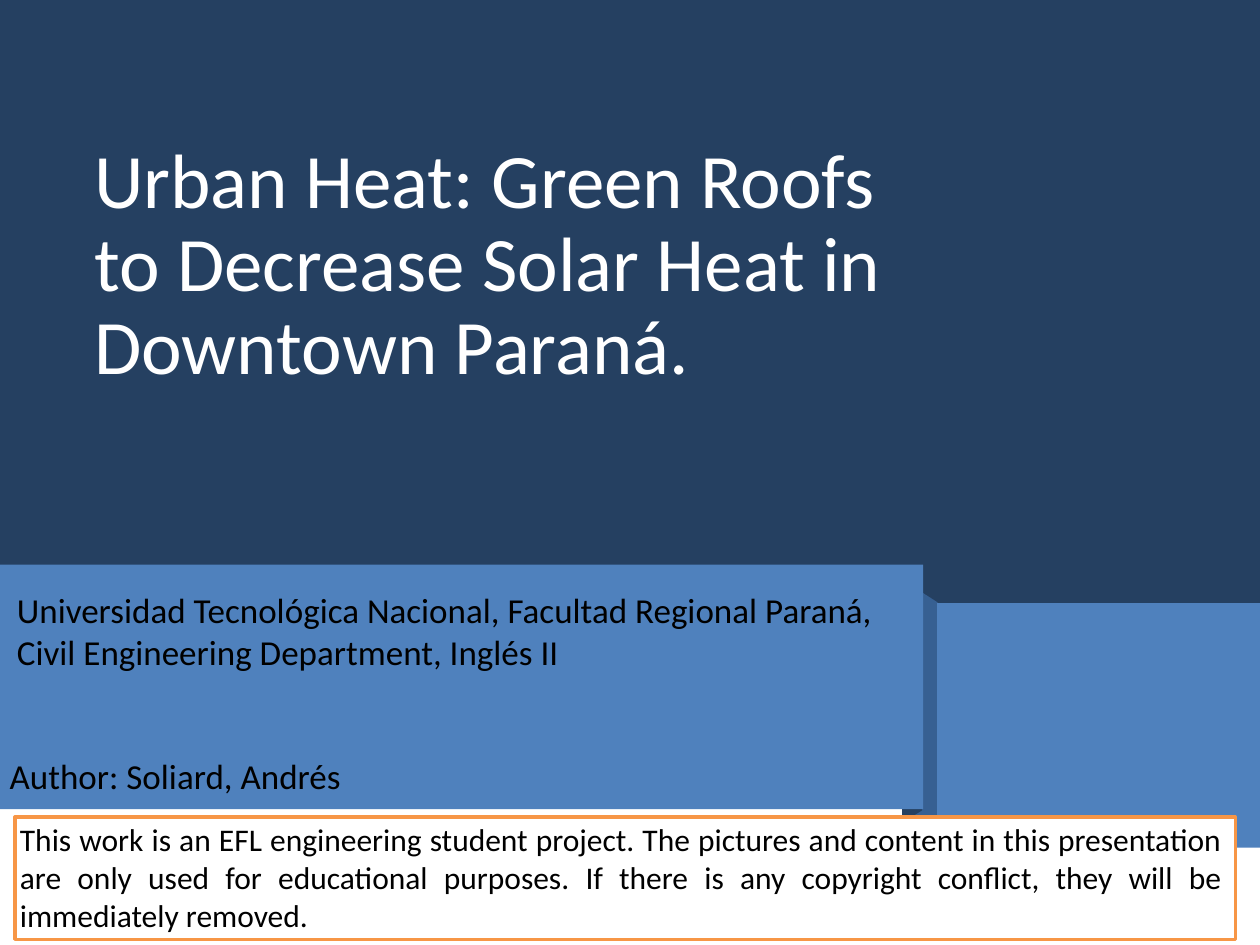
from dataclasses import dataclass

from pptx import Presentation
from pptx.dml.color import RGBColor
from pptx.enum.shapes import MSO_SHAPE
from pptx.enum.text import MSO_ANCHOR, PP_ALIGN
from pptx.shapes.autoshape import Shape
from pptx.slide import Slide
from pptx.util import Pt


@dataclass(frozen=True)
class Theme:
    font: str = "Calibri"
    navy: str = "254061"
    shade: str = "376092"
    blue: str = "4F81BD"
    orange: str = "F79646"
    white: str = "FFFFFF"
    black: str = "000000"
    title_size: float = 44
    body_size: float = 20
    notice_size: float = 18
    outline_width: float = 2


THEME = Theme()


@dataclass(frozen=True)
class Box:
    left: float
    top: float
    width: float
    height: float


@dataclass(frozen=True)
class Panel:
    box: Box
    fill: str
    outline: str | None = None


@dataclass(frozen=True)
class Facet:
    points: tuple[tuple[float, float], ...]
    fill: str


@dataclass(frozen=True)
class Label:
    box: Box
    text: str
    size: float
    color: str = THEME.black
    alignment: PP_ALIGN = PP_ALIGN.LEFT
    anchor: MSO_ANCHOR = MSO_ANCHOR.TOP
    line_spacing: float = 1.0
    bottom_inset: float = 3.6


BACKDROP = Panel(Box(0, 0, 720, 358.6), THEME.navy)
FACETS = (
    Facet(((535.7, 483.8), (515.5, 471.6), (515.5, 331.2), (535.7, 344.2)), THEME.shade),
    Facet(((527, 463), (515.5, 470.2), (515.5, 329.8), (527, 322.6)), THEME.navy),
)
PANELS = (
    Panel(Box(0, 322.6, 527.5, 139.8), THEME.blue),
    Panel(Box(535.5, 344.6, 184.5, 139.8), THEME.blue),
    Panel(Box(8.5, 467, 697.5, 69.8), THEME.white, THEME.orange),
)
LABELS = (
    Label(
        Box(46.8, 50.4, 488.9, 251.3),
        "Urban Heat: Green Roofs to Decrease Solar Heat in Downtown Paraná.",
        THEME.title_size,
        THEME.white,
        anchor=MSO_ANCHOR.MIDDLE,
        line_spacing=0.9,
        bottom_inset=51.2,
    ),
    Label(
        Box(2.6, 332.6, 527.8, 55.4),
        "Universidad Tecnológica Nacional, Facultad Regional Paraná, "
        "Civil Engineering Department, Inglés II",
        THEME.body_size,
    ),
    Label(
        Box(4.3, 465.2, 701.3, 72.7),
        "This work is an EFL engineering student project. The pictures and content "
        "in this presentation are only used for educational purposes. If there is "
        "any copyright conflict, they will be immediately removed.",
        THEME.notice_size,
        alignment=PP_ALIGN.JUSTIFY,
    ),
    Label(Box(-1.6, 427.7, 713.5, 31.7), "Author: Soliard, Andrés", THEME.body_size),
)


def lengths(box: Box) -> tuple[Pt, Pt, Pt, Pt]:
    return Pt(box.left), Pt(box.top), Pt(box.width), Pt(box.height)


def paint(shape: Shape, fill: str, outline: str | None = None) -> None:
    shape.shadow.inherit = False
    shape.fill.solid()
    shape.fill.fore_color.rgb = RGBColor.from_string(fill)
    if outline is None:
        shape.line.fill.background()
    else:
        shape.line.color.rgb = RGBColor.from_string(outline)
        shape.line.width = Pt(THEME.outline_width)


def draw_panel(slide: Slide, panel: Panel) -> None:
    shape = slide.shapes.add_shape(MSO_SHAPE.RECTANGLE, *lengths(panel.box))
    paint(shape, panel.fill, panel.outline)


def draw_facet(slide: Slide, facet: Facet) -> None:
    start, *rest = [(Pt(x), Pt(y)) for x, y in facet.points]
    builder = slide.shapes.build_freeform(*start)
    builder.add_line_segments(rest, close=True)
    paint(builder.convert_to_shape(), facet.fill)


def draw_label(slide: Slide, label: Label) -> None:
    frame = slide.shapes.add_textbox(*lengths(label.box)).text_frame
    frame.word_wrap = True
    frame.vertical_anchor = label.anchor
    frame.margin_bottom = Pt(label.bottom_inset)
    paragraph = frame.paragraphs[0]
    paragraph.text = label.text
    paragraph.alignment = label.alignment
    paragraph.line_spacing = label.line_spacing
    paragraph.font.name = THEME.font
    paragraph.font.size = Pt(label.size)
    paragraph.font.color.rgb = RGBColor.from_string(label.color)


def main() -> None:
    presentation = Presentation()
    presentation.slide_width = Pt(720)
    presentation.slide_height = Pt(540)
    slide = presentation.slides.add_slide(presentation.slide_layouts[6])
    draw_panel(slide, BACKDROP)
    for facet in FACETS:
        draw_facet(slide, facet)
    for panel in PANELS:
        draw_panel(slide, panel)
    for label in LABELS:
        draw_label(slide, label)
    presentation.save("out.pptx")


if __name__ == "__main__":
    main()
